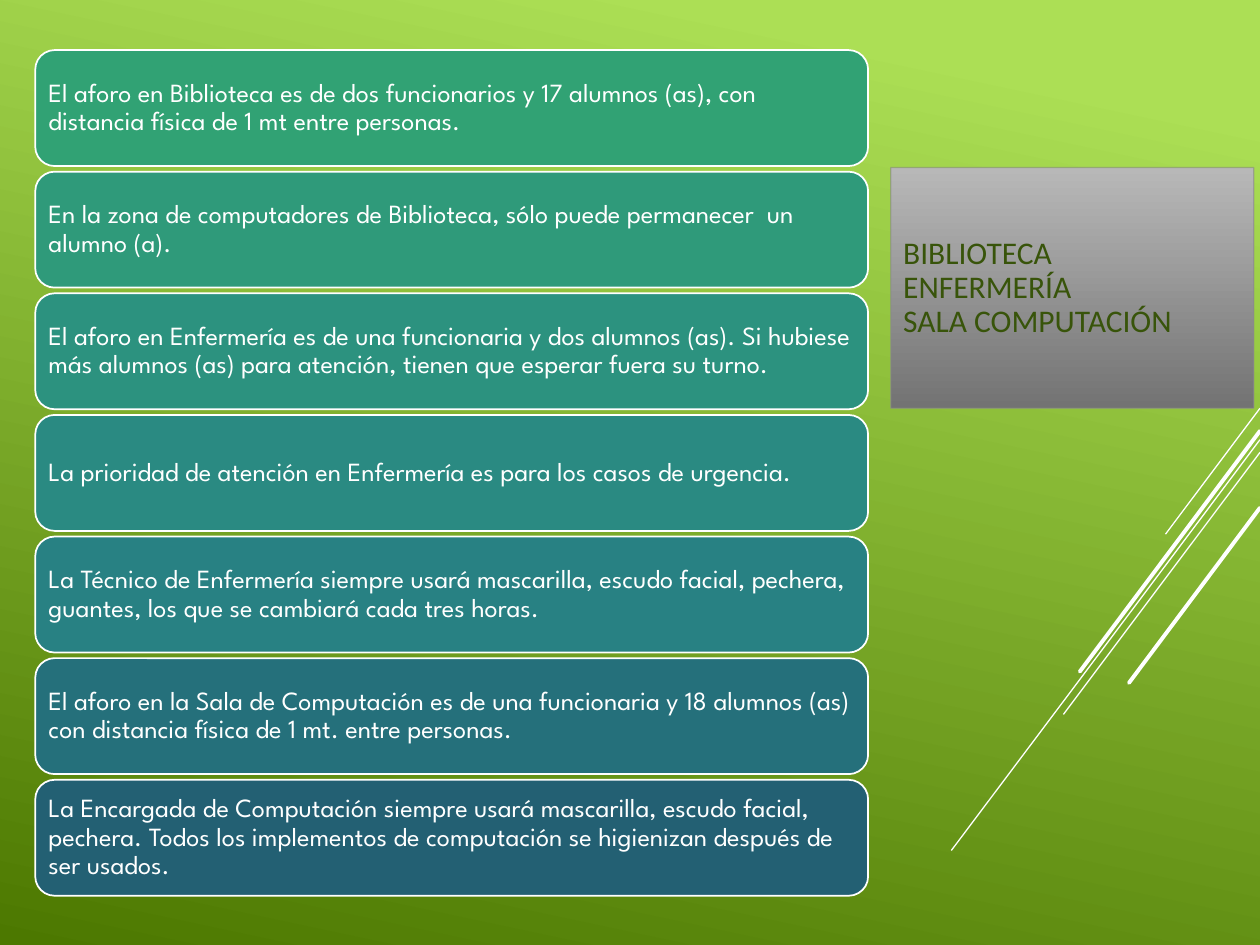
from lxml import etree
from pptx import Presentation
from pptx import util as u
from pptx.dml.color import RGBColor
from pptx.enum import shapes, text
from pptx.oxml.ns import qn

THEME = {
    "back": [(0.1, "ACDF55"), (1, "4C7800")],
    "panel": [(0, "B8B8B8"), (1, "737373")],
    "panel_line": "898989",
    "title": ("Calibri", 18, "38540A"),
    "body": ("League Spartan", 15, "FFFFFF"),
    "white": "FFFFFF",
}

prs = Presentation()
prs.slide_width, prs.slide_height = u.Inches(10), u.Inches(7.5)
s = prs.slides.add_slide(prs.slide_layouts[6])


def add_box(kind, x, y, w, h, fill, angle=None):
    """Place a shape by percent of the slide, with a solid or gradient fill."""
    W, H = prs.slide_width / 100, prs.slide_height / 100
    sp = s.shapes.add_shape(kind, int(x * W), int(y * H), int(w * W), int(h * H))
    sp.shadow.inherit = False
    if angle is None:
        sp.fill.solid()
        sp.fill.fore_color.rgb = RGBColor.from_string(fill)
    else:
        sp.fill.gradient()
        sp.fill.gradient_angle = angle
        for stop, (pos, color) in zip(sp.fill.gradient_stops, fill):
            stop.position = pos
            stop.color.rgb = RGBColor.from_string(color)
    return sp


def add_text(sp, lines, style, after):
    """Write left-aligned lines, one run each, in a single paragraph."""
    name, size, color = style
    tf = sp.text_frame
    tf.word_wrap = True
    tf.vertical_anchor = text.MSO_ANCHOR.MIDDLE
    p = tf.paragraphs[0]
    p.alignment = text.PP_ALIGN.LEFT
    p.line_spacing = 0.9
    p.space_after = u.Pt(after)
    for i, line in enumerate(lines):
        if i:
            p.add_line_break()
        r = p.add_run()
        r.text = line
        r.font.name, r.font.size = name, u.Pt(size)
        r.font.color.rgb = RGBColor.from_string(color)


# Background
sp = add_box(shapes.MSO_SHAPE.RECTANGLE, 0, 0, 100, 100, THEME["back"], 258)
sp.line.fill.background()

# Title panel
sp = add_box(shapes.MSO_SHAPE.RECTANGLE, 70.7, 17.73, 28.8, 25.47, THEME["panel"], 270)
sp.line.width = u.Pt(0.75)
sp.line.color.rgb = RGBColor.from_string(THEME["panel_line"])
color = sp.line._get_or_add_ln().find(".//" + qn("a:srgbClr"))
etree.SubElement(color, qn("a:alpha")).set("val", "60000")
add_text(sp, ["BIBLIOTECA", "ENFERMERÍA ", "SALA COMPUTACIÓN"], THEME["title"], 8)

# Diagonal lines: start and end in percent of the slide, width in points
for x1, y1, x2, y2, width in [
    (100, 43.2, 92.5, 56.53, 0.75),
    (100, 46.53, 75.5, 90, 0.75),
    (100, 47.87, 84.4, 75.6, 0.75),
    (100, 45.6, 85.7, 71.07, 2.25),
    (100, 53.73, 89.6, 72.27, 2.25),
]:
    W, H = prs.slide_width / 100, prs.slide_height / 100
    cx = s.shapes.add_connector(shapes.MSO_CONNECTOR.STRAIGHT,
                                int(x1 * W), int(y1 * H), int(x2 * W), int(y2 * H))
    cx.line.width = u.Pt(width)
    cx.line.color.rgb = RGBColor.from_string(THEME["white"])
    if width > 1:
        cx.line._get_or_add_ln().set("cap", "rnd")
    etree.SubElement(cx._element.spPr, qn("a:effectLst"))

# Rules: one rounded box per row
rules = [
    ("31A274", "El aforo en Biblioteca es de dos funcionarios y 17 alumnos (as), con distancia física de 1 mt entre personas."),
    ("2F9A7A", "En la zona de computadores de Biblioteca, sólo puede permanecer  un alumno (a)."),
    ("2C927F", "El aforo en Enfermería es de una funcionaria y dos alumnos (as). Si hubiese más alumnos (as) para atención, tienen que esperar fuera su turno."),
    ("2A8A82", "La prioridad de atención en Enfermería es para los casos de urgencia."),
    ("288183", "La Técnico de Enfermería siempre usará mascarilla, escudo facial, pechera, guantes, los que se cambiará cada tres horas."),
    ("25707B", "El aforo en la Sala de Computación es de una funcionaria y 18 alumnos (as) con distancia física de 1 mt. entre personas."),
    ("236073", "La Encargada de Computación siempre usará mascarilla, escudo facial, pechera. Todos los implementos de computación se higienizan después de ser usados."),
]
TOP, PITCH = 5.3, 12.87
for row, (fill, rule) in enumerate(rules):
    sp = add_box(shapes.MSO_SHAPE.ROUNDED_RECTANGLE, 2.8, TOP + row * PITCH, 66.1, 12.27, fill)
    sp.line.width = u.Pt(1)
    sp.line.color.rgb = RGBColor.from_string(THEME["white"])
    tf = sp.text_frame
    tf.margin_left = tf.margin_right = u.Inches(0.06)
    tf.margin_top = tf.margin_bottom = u.Inches(0.06)
    add_text(sp, [rule], THEME["body"], 5.25)

prs.save("out.pptx")
